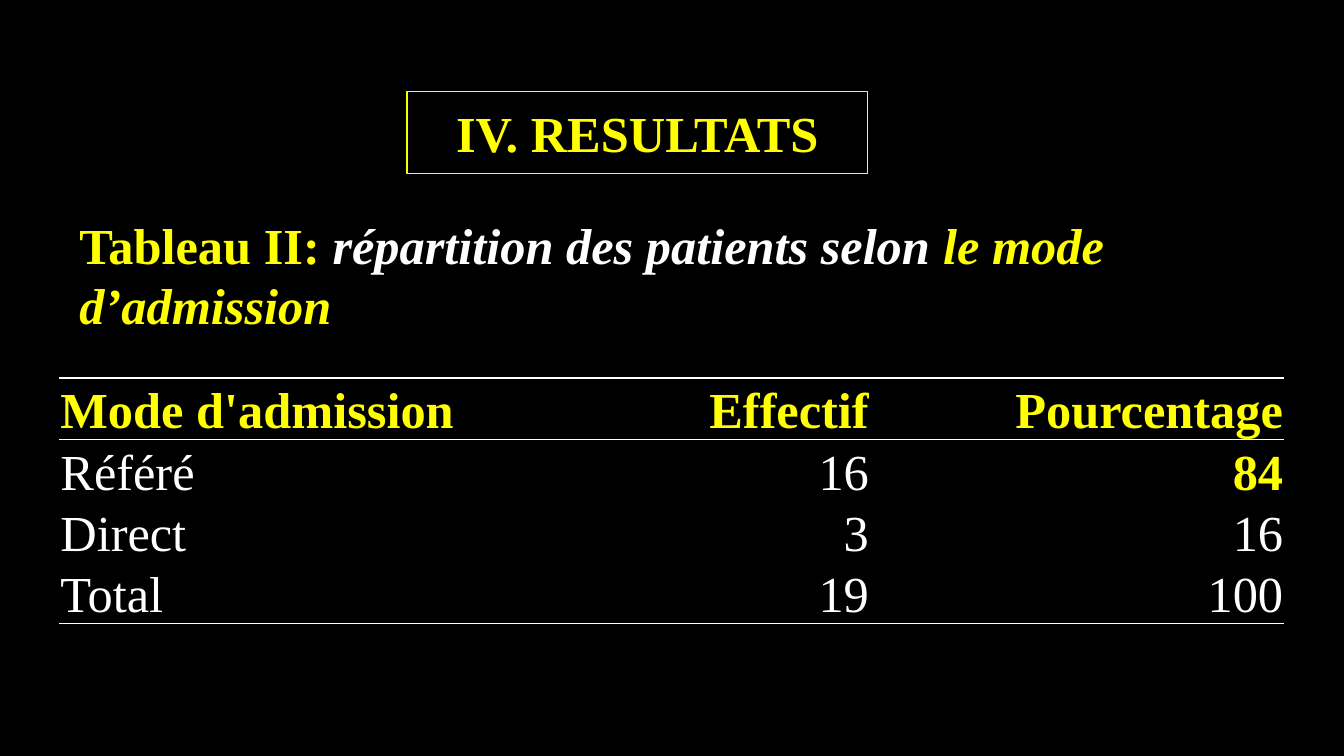
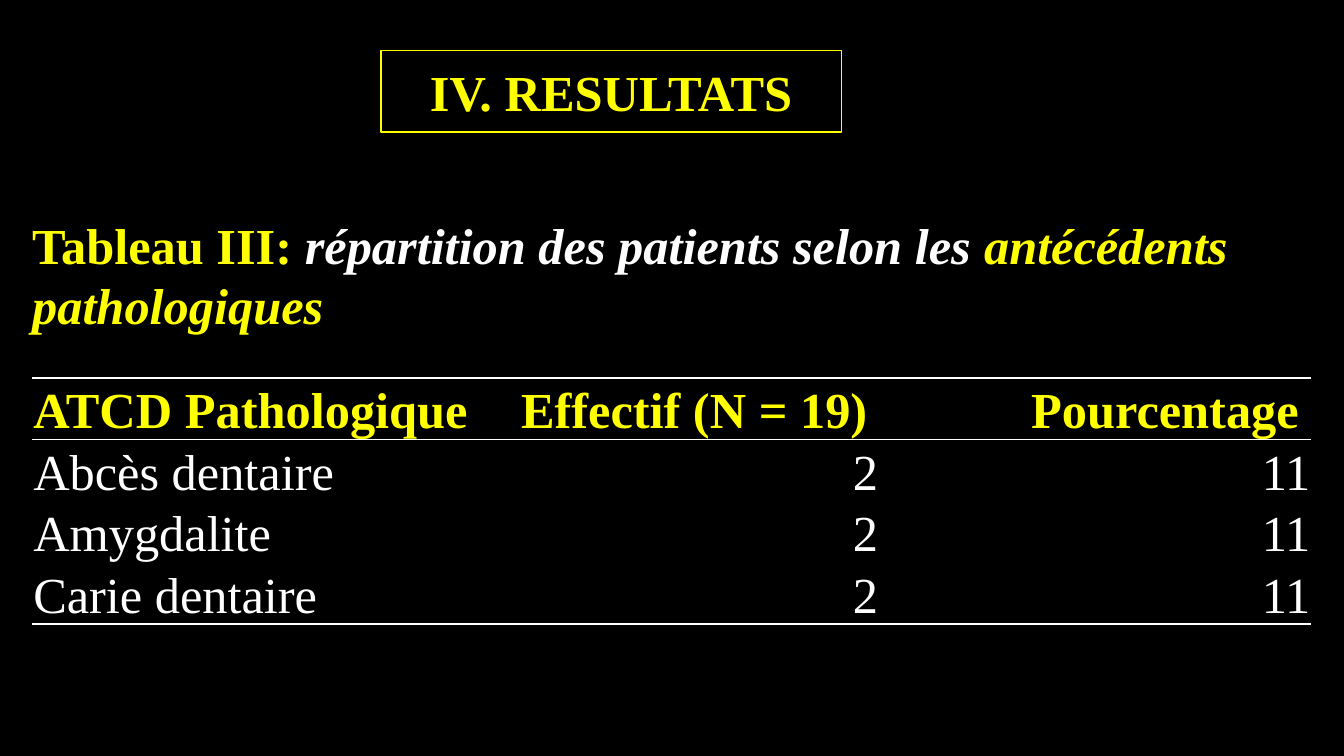
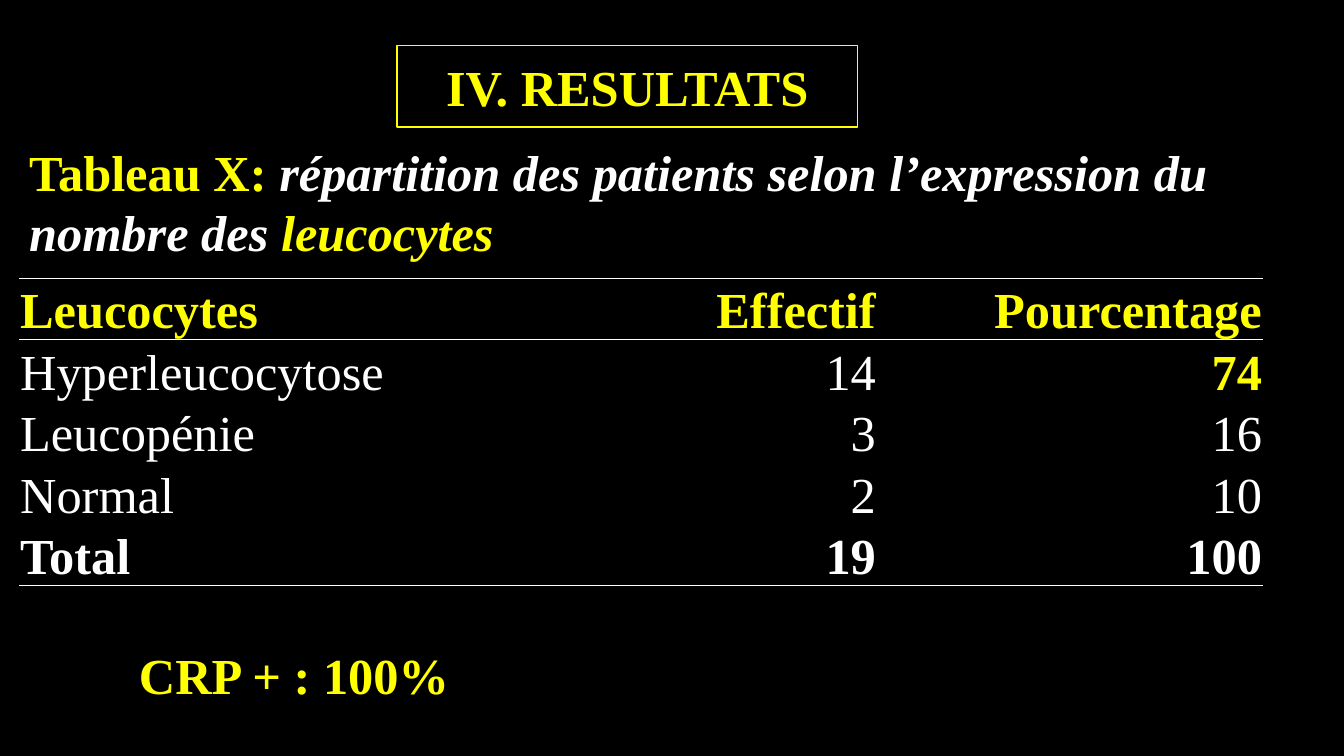
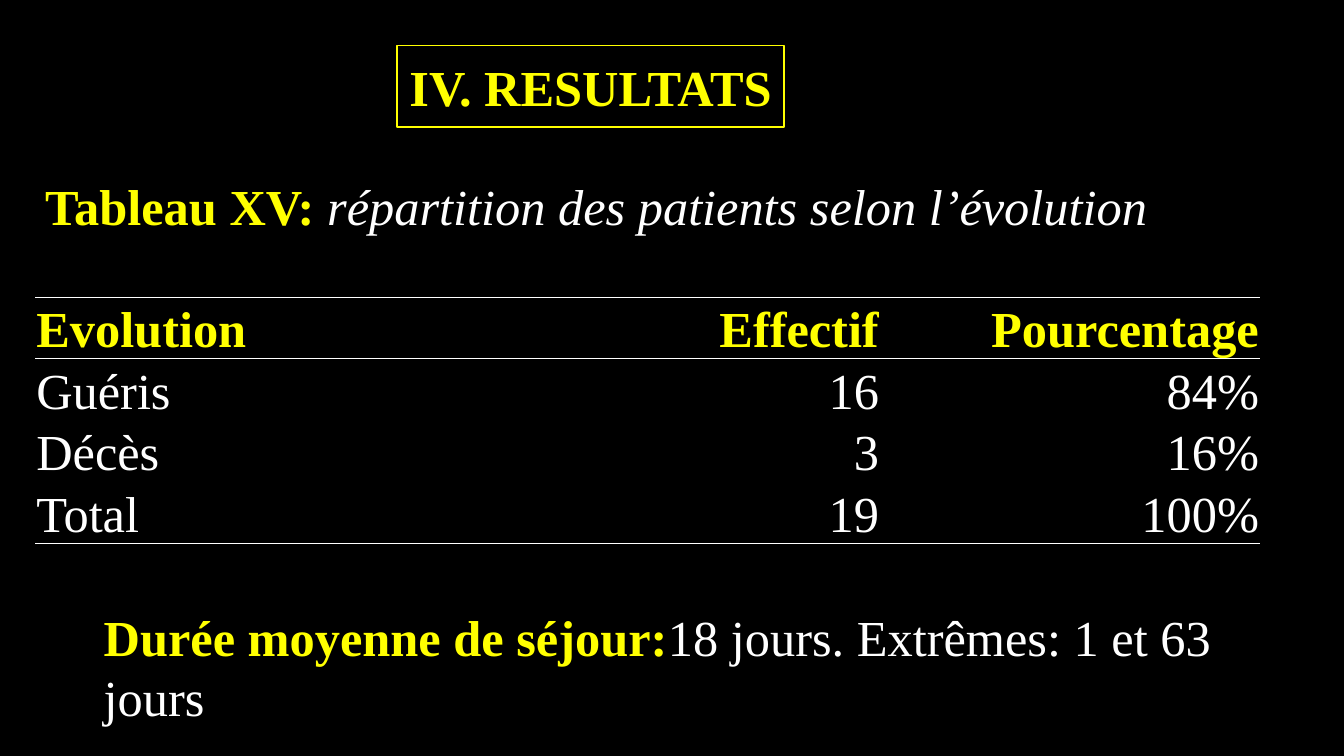
import lxml.etree
import pptx
import pptx.dml.color
import pptx.enum.shapes
import pptx.enum.text
import pptx.oxml.ns
import pptx.util

COLOURS = {"night": "000000", "yellow": "FFFF00", "white": "FFFFFF"}
FONT = {"name": "Times New Roman", "size": pptx.util.Pt(36)}
STYLES = {
    "accent": {"colour": "yellow", "bold": True, "italic": False},
    "accent_italic": {"colour": "yellow", "bold": True, "italic": True},
    "strong": {"colour": "white", "bold": True, "italic": False},
    "strong_italic": {"colour": "white", "bold": True, "italic": True},
    "plain": {"colour": "white", "bold": False, "italic": False},
    "plain_italic": {"colour": "white", "bold": False, "italic": True},
}
GRID_COLUMNS, GRID_ROWS = 40, 30
TITLE_WIDTH, TITLE_HEIGHT = 13.7, 3.24
TABLE_ROW = 2.44
LINE_HEIGHT, BOX_PADDING = 2.4, 0.44
PLAIN_TABLE_STYLE = "{2D5ABB26-0587-4C30-8999-92F81FD0307C}"
ALIGN = pptx.enum.text.PP_ALIGN


def colour(name):
    return pptx.dml.color.RGBColor.from_string(COLOURS[name])


def apply(target, values):
    for attribute, value in values.items():
        setattr(target, attribute, value)


class Deck:
    def __init__(self):
        self.presentation = pptx.Presentation()
        apply(self.presentation, {
            "slide_width": pptx.util.Inches(13.33),
            "slide_height": pptx.util.Inches(7.5),
        })
        self.slide = None

    def x(self, columns):
        return round(self.presentation.slide_width * columns / GRID_COLUMNS)

    def y(self, rows):
        return round(self.presentation.slide_height * rows / GRID_ROWS)

    def area(self, left, top, width, height):
        return self.x(left), self.y(top), self.x(width), self.y(height)

    def new_slide(self):
        self.slide = self.presentation.slides.add_slide(self.presentation.slide_layouts[6])
        backdrop = self.slide.background.fill
        backdrop.solid()
        backdrop.fore_color.rgb = colour("night")

    def add_runs(self, frame, runs, align=ALIGN.LEFT):
        paragraph = frame.paragraphs[0]
        paragraph.alignment = align
        for text, style in runs:
            run = paragraph.add_run()
            run.text = text
            look = dict(STYLES[style])
            run.font.color.rgb = colour(look.pop("colour"))
            apply(run.font, {**FONT, **look})

    def title(self, left, top, width=TITLE_WIDTH):
        heading = self.slide.shapes.add_shape(
            pptx.enum.shapes.MSO_SHAPE.RECTANGLE, *self.area(left, top, width, TITLE_HEIGHT))
        heading.shadow.inherit = False
        heading.fill.background()
        heading.line.color.rgb = colour("yellow")
        heading.line.width = pptx.util.Pt(1)
        heading.text_frame.vertical_anchor = pptx.enum.text.MSO_ANCHOR.MIDDLE
        self.add_runs(heading.text_frame, [("IV. RESULTATS", "accent")], ALIGN.CENTER)

    def text(self, left, top, width, lines, runs):
        height = lines * LINE_HEIGHT + BOX_PADDING
        frame = self.slide.shapes.add_textbox(*self.area(left, top, width, height)).text_frame
        apply(frame, {
            "word_wrap": True,
            "auto_size": pptx.enum.text.MSO_AUTO_SIZE.SHAPE_TO_FIT_TEXT,
        })
        self.add_runs(frame, runs)

    def borders(self, cell, ruled):
        properties = cell._tc.get_or_add_tcPr()
        qn = pptx.oxml.ns.qn
        for side in "LRTB":
            edge = lxml.etree.SubElement(properties, qn("a:ln" + side), w=str(pptx.util.Pt(1)))
            if side in ruled:
                paint = lxml.etree.SubElement(edge, qn("a:solidFill"))
                lxml.etree.SubElement(paint, qn("a:srgbClr"), val=COLOURS["white"])
            else:
                lxml.etree.SubElement(edge, qn("a:noFill"))

    def table(self, left, top, widths, rows, styles=None, header_indents=None):
        styles = styles or {}
        frame = self.slide.shapes.add_table(
            len(rows), len(widths), *self.area(left, top, sum(widths), len(rows) * TABLE_ROW))
        grid = frame.table
        apply(grid, {"first_row": False, "horz_banding": False})
        grid._tbl.tblPr.find(pptx.oxml.ns.qn("a:tableStyleId")).text = PLAIN_TABLE_STYLE
        for column, width in zip(grid.columns, widths):
            column.width = self.x(width)
        hair = pptx.util.Inches(0.01)
        for r, row in enumerate(rows):
            grid.rows[r].height = self.y(TABLE_ROW)
            ruled = {0: "TB", 1: "T", len(rows) - 1: "B"}.get(r, "")
            for c, text in enumerate(row):
                cell = grid.cell(r, c)
                indented = header_indents and r == 0
                indent = self.x(header_indents[c]) if indented else 0
                self.borders(cell, ruled)
                cell.fill.background()
                apply(cell, {
                    "margin_left": hair + indent, "margin_right": hair,
                    "margin_top": hair, "margin_bottom": 0,
                    "vertical_anchor": pptx.enum.text.MSO_ANCHOR.BOTTOM,
                })
                style = styles.get((r, c), "plain" if r else "accent")
                align = ALIGN.LEFT if c == 0 or indented else ALIGN.RIGHT
                self.add_runs(cell.text_frame, [(text, style)], align)


def main():
    deck = Deck()

    deck.new_slide()
    deck.title(12.12, 3.64)
    deck.table(1.77, 15, [12.45, 11.67, 12.33], [
        ["Mode d'admission", "Effectif", "Pourcentage"],
        ["Référé", "16", "84"],
        ["Direct", "3", "16"],
        ["Total", "19", "100"],
    ], {(1, 2): "accent"})
    deck.text(2.07, 8.28, 37.11, 2, [
        ("Tableau II: ", "accent"),
        ("répartition des patients selon ", "strong_italic"),
        ("le mode d’admission", "accent_italic"),
    ])

    deck.new_slide()
    deck.title(11.34, 2)
    deck.table(0.96, 15, [13.02, 12.18, 12.87], [
        ["ATCD Pathologique", "Effectif (N = 19)", "Pourcentage"],
        ["Abcès dentaire", "2", "11"],
        ["Amygdalite", "2", "11"],
        ["Carie dentaire", "2", "11"],
    ], header_indents=[0, 1.5, 4.5])
    deck.text(0.66, 8.28, 38.64, 2, [
        ("Tableau III: ", "accent"),
        ("répartition des patients selon les ", "strong_italic"),
        ("antécédents pathologiques", "accent_italic"),
    ])

    deck.new_slide()
    deck.title(11.82, 1.8)
    deck.table(0.57, 11.04, [14.67, 10.86, 11.49], [
        ["Leucocytes", "Effectif", "Pourcentage"],
        ["Hyperleucocytose", "14", "74"],
        ["Leucopénie", "3", "16"],
        ["Normal", "2", "10"],
        ["Total", "19", "100"],
    ], {(1, 2): "accent", **{(4, column): "strong" for column in range(3)}})
    deck.text(0.57, 5.4, 37.95, 2, [
        ("Tableau X: ", "accent"),
        ("répartition des patients selon l’expression du nombre des ", "strong_italic"),
        ("leucocytes", "accent_italic"),
    ])
    deck.text(3.84, 25.36, 10.05, 1, [("CRP + : 100%", "accent")])

    deck.new_slide()
    deck.title(11.82, 1.8, 11.52)
    deck.table(1.05, 11.8, [14.46, 10.68, 11.31], [
        ["Evolution", "Effectif", "Pourcentage"],
        ["Guéris", "16", "84%"],
        ["Décès", "3", "16%"],
        ["Total", "19", "100%"],
    ])
    deck.text(1.05, 6.76, 33.48, 1, [
        ("Tableau XV: ", "accent"),
        ("répartition des patients selon l’évolution", "plain_italic"),
    ])
    deck.text(2.79, 23.84, 33.78, 2, [
        ("Durée moyenne de séjour:", "accent"),
        ("18 jours. Extrêmes: 1 et 63 jours", "plain"),
    ])

    deck.presentation.save("out.pptx")


if __name__ == "__main__":
    main()
